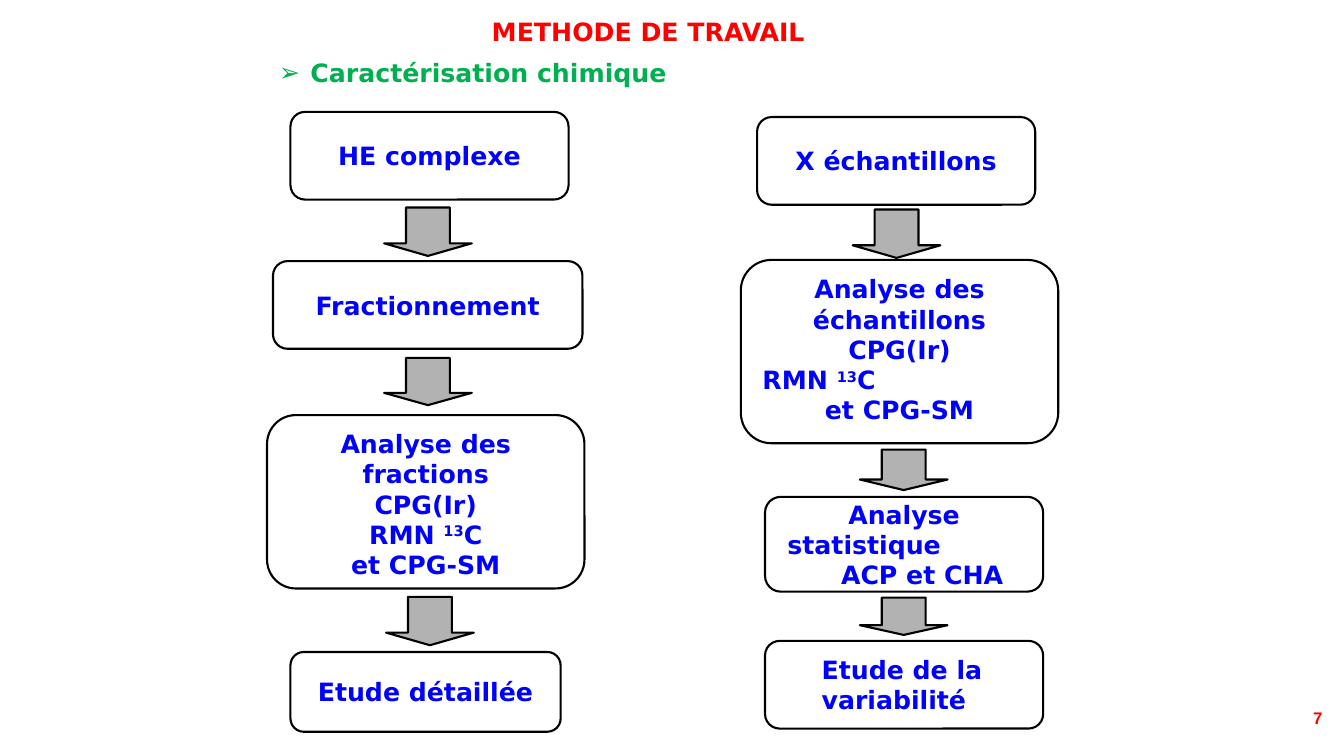
import dataclasses
import lxml.etree
import pptx
import pptx.dml.color
import pptx.enum.shapes
import pptx.enum.text
import pptx.oxml.ns
import pptx.util

Cm = pptx.util.Cm
Pt = pptx.util.Pt
Kind = pptx.enum.shapes.MSO_SHAPE
Align = pptx.enum.text.PP_ALIGN
Anchor = pptx.enum.text.MSO_ANCHOR
qn = pptx.oxml.ns.qn


@dataclasses.dataclass
class Line:
    text: str
    left: float | None = None


@dataclasses.dataclass
class Step:
    x: float
    y: float
    w: float
    h: float
    lines: list[Line]
    anchor: Anchor = Anchor.MIDDLE


@dataclasses.dataclass
class Arrow:
    x: float
    y: float
    h: float


STEPS = [
    Step(7.32, 2.82, 7.01, 2.21, [Line("HE complexe")]),
    Step(6.88, 6.58, 7.8, 2.21, [Line("Fractionnement")]),
    Step(6.73, 10.46, 8, 4.37,
         [Line("Analyse des fractions"), Line("CPG(Ir)"),
          Line("RMN ^13^C"), Line("et CPG-SM")], Anchor.TOP),
    Step(7.32, 16.43, 6.81, 2.01, [Line("Etude détaillée")]),
    Step(19.08, 2.95, 7.01, 2.21, [Line("X échantillons")]),
    Step(18.67, 6.55, 8, 4.62,
         [Line("Analyse des échantillons"), Line("CPG(Ir)"),
          Line("RMN ^13^C", 0.07), Line("et CPG-SM")], Anchor.TOP),
    Step(19.28, 12.52, 7.01, 2.39,
         [Line("Analyse"), Line("statistique", 0.2), Line("ACP et CHA", 1.55)]),
    Step(19.28, 16.15, 7.01, 2.21, [Line("Etude de la variabilité", 1.07)]),
]
ARROWS = [
    Arrow(9.68, 5.23, 1.22), Arrow(9.68, 9.02, 1.19), Arrow(9.73, 15.04, 1.22),
    Arrow(21.49, 5.28, 1.22), Arrow(21.67, 11.33, 1.02), Arrow(21.67, 15.06, 0.94),
]


def tint(item, code: str) -> None:
    item.rgb = pptx.dml.color.RGBColor.from_string(code)


def style(para, code: str, size: float = 18, face: str = "DejaVu Sans") -> None:
    para.space_before = Pt(0)
    for run in para.runs:
        run.font.size = Pt(size)
        run.font.name = face
        run.font.bold = True
        tint(run.font.color, code)


def draw(slide, kind: Kind, x: float, y: float, w: float, h: float, code: str):
    shape = slide.shapes.add_shape(kind, Cm(x), Cm(y), Cm(w), Cm(h))
    shape.shadow.inherit = False
    shape.fill.solid()
    tint(shape.fill.fore_color, code)
    tint(shape.line.color, "000000")
    shape.line.width = Pt(1.5)
    return shape


def write(para, line: Line) -> None:
    first, *rest = line.text.split("^")
    para.text = first
    for spot, part in enumerate(rest):
        run = para.add_run()
        run.text = part
        if spot % 2 == 0:
            run.font._element.set("baseline", "30000")
    para.alignment = Align.CENTER
    if line.left is not None:
        para.alignment = Align.LEFT
        para._p.get_or_add_pPr().set("marL", str(Cm(line.left)))
    style(para, "0000FF")


def add_step(slide, step: Step) -> None:
    shape = draw(slide, Kind.ROUNDED_RECTANGLE, step.x, step.y, step.w, step.h, "FFFFFF")
    frame = shape.text_frame
    frame.word_wrap = True
    frame.vertical_anchor = step.anchor
    for spot, line in enumerate(step.lines):
        write(frame.add_paragraph() if spot else frame.paragraphs[0], line)


def add_arrow(slide, arrow: Arrow) -> None:
    shape = draw(slide, Kind.DOWN_ARROW, arrow.x, arrow.y, 2.21, arrow.h, "B2B2B2")
    shape.adjustments[0] = 0.5
    shape.adjustments[1] = 0.26


def label(shape, x: float, y: float, w: float, h: float, text: str,
          align: Align, anchor: Anchor = Anchor.TOP):
    shape.left, shape.top, shape.width, shape.height = Cm(x), Cm(y), Cm(w), Cm(h)
    frame = shape.text_frame
    frame.text = text
    frame.word_wrap = True
    frame.auto_size = pptx.enum.text.MSO_AUTO_SIZE.NONE
    frame.vertical_anchor = anchor
    para = frame.paragraphs[0]
    para.alignment = align
    return para


def main() -> None:
    deck = pptx.Presentation()
    deck.slide_width, deck.slide_height = Cm(33.87), Cm(19.05)
    slide = deck.slides.add_slide(deck.slide_layouts[1])

    head = label(slide.shapes.title, 5.44, 0.28, 21.79, 1.02,
                 "METHODE DE TRAVAIL", Align.CENTER)
    style(head, "FF0000")

    topic = label(slide.placeholders[1], 6.78, 1.32, 12.5, 1.02,
                  "Caractérisation chimique", Align.LEFT)
    props = topic._p.get_or_add_pPr()
    props.set("marL", str(Cm(0.79)))
    props.set("indent", str(Cm(-0.79)))
    lxml.etree.SubElement(props, qn("a:buChar")).set("char", "➢")
    style(topic, "00B050")

    for step in STEPS:
        add_step(slide, step)
    for arrow in ARROWS:
        add_arrow(slide, arrow)

    box = slide.shapes.add_textbox(0, 0, 0, 0)
    page = label(box, 27.66, 17.42, 5.92, 1.32, "7", Align.RIGHT, Anchor.MIDDLE)
    style(page, "FF0000", 12, "Arial")

    deck.save("out.pptx")


if __name__ == "__main__":
    main()
